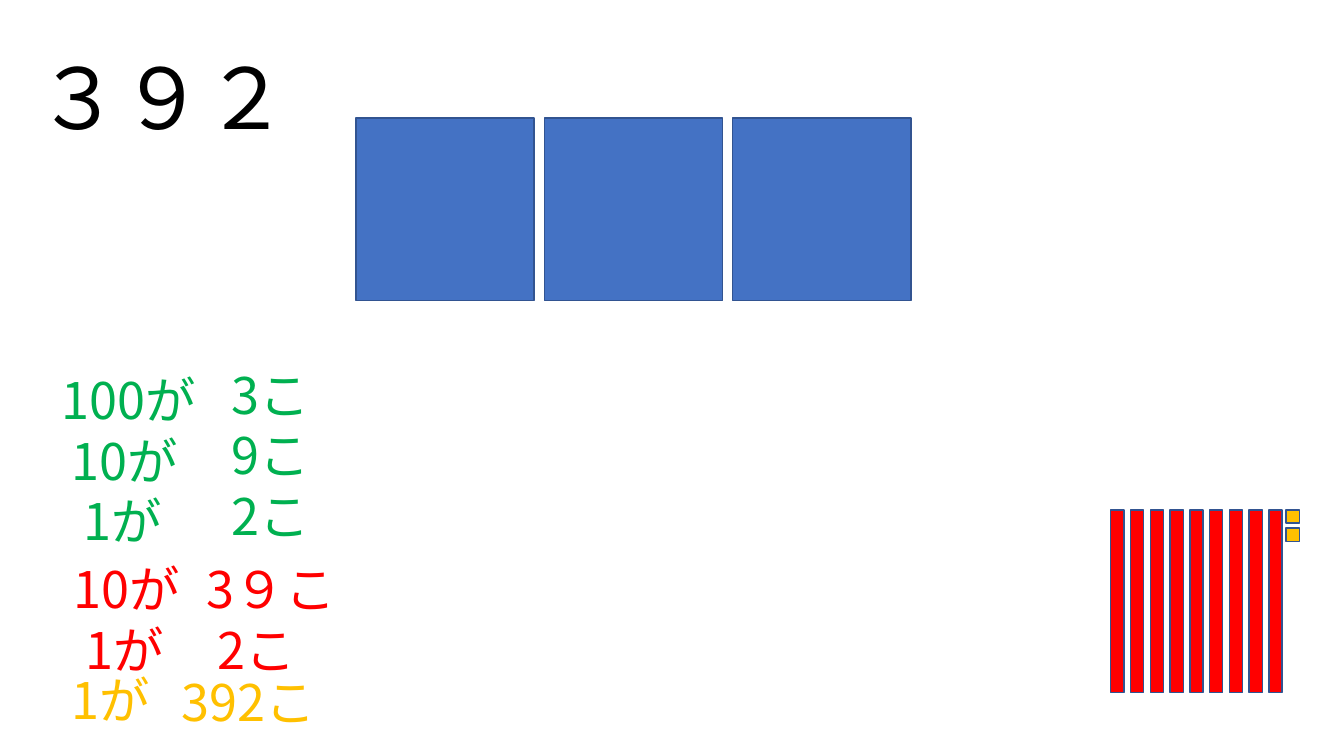
"""Build a slide that splits 392 into hundreds, tens and ones."""
from lxml import etree
from pptx import Presentation
from pptx.dml.color import RGBColor
from pptx.enum.shapes import MSO_SHAPE
from pptx.enum.text import MSO_AUTO_SIZE
from pptx.oxml.ns import qn
from pptx.util import Pt

RECT = MSO_SHAPE.RECTANGLE
GROW = MSO_AUTO_SIZE.SHAPE_TO_FIT_TEXT
FONT = "Noto Sans CJK JP"
BLACK, BLUE, EDGE = "000000", "4472C4", "325491"
GREEN, RED, GOLD = "00B050", "FF0000", "FFC000"
SPACE = 8.06


def paint(target, color):
    target.rgb = RGBColor.from_string(color)


prs = Presentation()
prs.slide_width, prs.slide_height = Pt(960), Pt(540)
slide = prs.slides.add_slide(prs.slide_layouts[6])

blocks = [(254.2 + 134.6 * i, 84.4, 127.4, 130.3, BLUE) for i in range(3)]
blocks += [(793.4 + 14.13 * i, 364.3, 9.4, 130.3, RED) for i in range(9)]
blocks += [(918.7, 364.3 + 13 * i, 9.4, 9.4, GOLD) for i in range(2)]
for left, top, width, height, color in blocks:
    block = slide.shapes.add_shape(RECT, Pt(left), Pt(top), Pt(width), Pt(height))
    block.shadow.inherit = False
    block.fill.solid()
    paint(block.fill.fore_color, color)
    paint(block.line.color, EDGE)
    block.line.width = Pt(1)

texts = [
    (18.7, 28.8, 255, 80, 60, BLACK, [(0, "３９２")]),
    (150.5, 256.3, 144, 138, 36, GREEN, [(1, "3こ"), (1, "9こ"), (1, "2こ")]),
    (28.1, 260.4, 144, 138, 36, GREEN, [(1.1, "100が"), (2, "10が"), (3, "1が")]),
    (29.5, 395.3, 144, 94, 36, RED, [(2, "10が"), (3, "1が")]),
    (132.5, 395.3, 144, 94, 36, RED, [(1, "3９こ"), (2, "2こ")]),
    (28.1, 474.5, 144, 51, 36, GOLD, [(2, "1が")]),
    (114.5, 475.9, 144, 51, 36, GOLD, [(1, "392こ")]),
]
for left, top, width, height, size, color, lines in texts:
    box = slide.shapes.add_textbox(Pt(left), Pt(top), Pt(width), Pt(height))
    frame = box.text_frame
    frame.word_wrap = True
    frame.auto_size = GROW
    for i, (indent, words) in enumerate(lines):
        para = frame.add_paragraph() if i else frame.paragraphs[0]
        para._p.get_or_add_pPr().set("marL", str(Pt(indent * SPACE)))
        run = para.add_run()
        run.text = words
        run.font.size = Pt(size)
        run.font.name = FONT
        paint(run.font.color, color)
        east = etree.SubElement(run._r.get_or_add_rPr(), qn("a:ea"))
        east.set("typeface", FONT)

prs.save("out.pptx")
